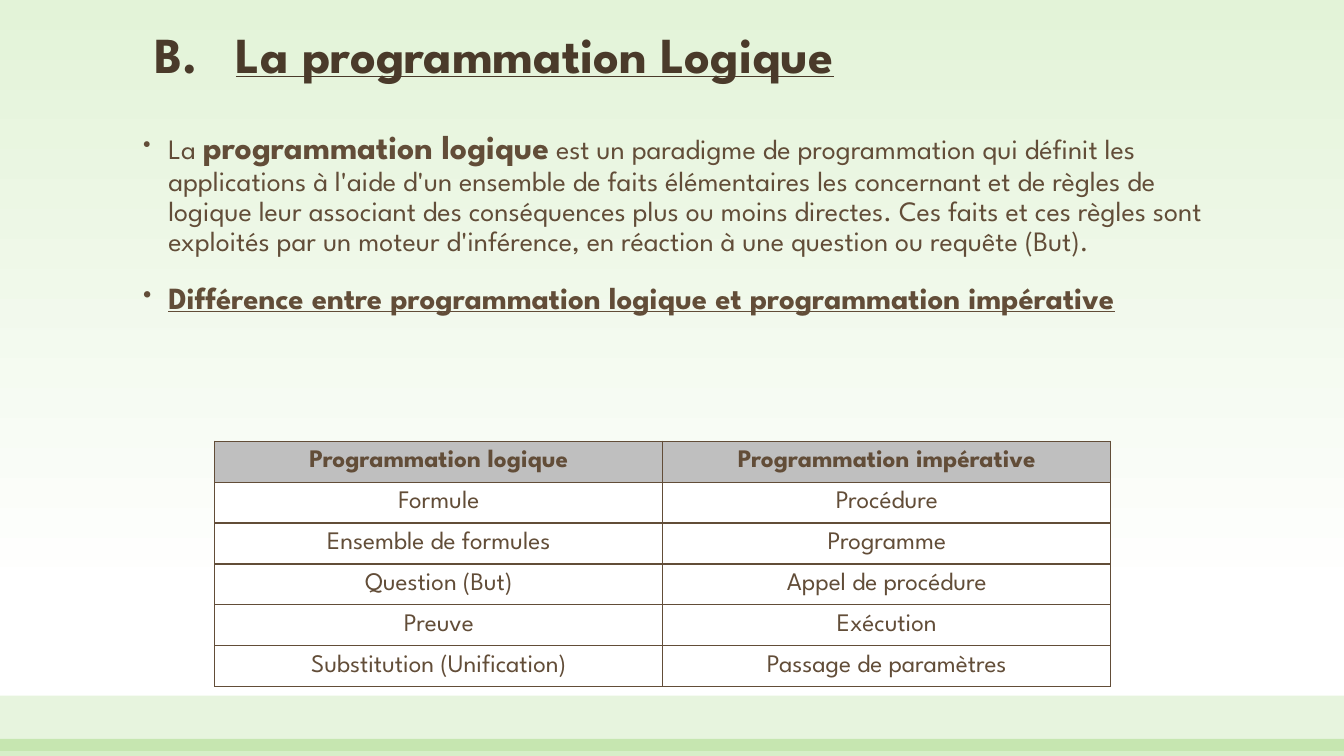
"""Build the slide on logic programming with its comparison table."""
from dataclasses import dataclass

from lxml.etree import SubElement
from pptx import Presentation
from pptx.dml.color import RGBColor
from pptx.enum.shapes import MSO_SHAPE
from pptx.enum.text import MSO_ANCHOR, MSO_AUTO_SIZE, PP_ALIGN
from pptx.oxml.ns import qn
from pptx.slide import Slide
from pptx.table import _Cell
from pptx.text.text import Font, _Paragraph
from pptx.util import Pt


@dataclass(frozen=True)
class Theme:
    font: str = "League Spartan"
    heading: str = "4A3A2A"
    text: str = "624D38"
    band: str = "72C23C"
    sky: str = "E3F3D8"
    white: str = "FFFFFF"
    header_fill: str = "BFBFBF"
    title_size: int = 36
    term_size: int = 24
    subtitle_size: int = 22
    body_size: int = 20
    table_size: int = 18


@dataclass(frozen=True)
class Box:
    left: float
    top: float
    width: float
    height: float

    def lengths(self) -> tuple[Pt, Pt, Pt, Pt]:
        return Pt(self.left), Pt(self.top), Pt(self.width), Pt(self.height)


@dataclass(frozen=True)
class Band:
    box: Box
    opacity: int


@dataclass(frozen=True)
class Equivalence:
    logic: str
    imperative: str


@dataclass(frozen=True)
class Phrase:
    text: str
    size: int
    bold: bool = False


THEME = Theme()
SLIDE_WIDTH, SLIDE_HEIGHT = 960, 540
TITLE_BOX = Box(103, 0, 749, 64)
BODY_BOX = Box(91.5, 90, 793.5, 191.5)
TABLE_BOX = Box(153.5, 315.25, 640, 175.2)
BANDS = (
    Band(Box(0, 496.8, SLIDE_WIDTH, 39.6), 17),
    Band(Box(0, 527.8, SLIDE_WIDTH, 12.2), 28),
)
DEFINITION = (
    Phrase("La ", THEME.body_size),
    Phrase("programmation logique", THEME.term_size, True),
    Phrase(
        " est un paradigme de programmation qui définit les applications "
        "à l'aide d'un ensemble de faits élémentaires les concernant et de règles "
        "de logique leur associant des conséquences plus ou moins directes. "
        "Ces faits et ces règles sont exploités par un moteur d'inférence, "
        "en réaction à une question ou requête (But).",
        THEME.body_size,
    ),
)
EQUIVALENCES = (
    Equivalence("Programmation logique", "Programmation impérative"),
    Equivalence("Formule", "Procédure"),
    Equivalence("Ensemble de formules", "Programme"),
    Equivalence("Question (But)", "Appel de procédure"),
    Equivalence("Preuve", "Exécution"),
    Equivalence("Substitution (Unification)", "Passage de paramètres"),
)


def style_font(font: Font, size: int, color: str, bold: bool = False, underline: bool = False) -> None:
    font.name = THEME.font
    font.size = Pt(size)
    font.bold = bold
    font.underline = underline
    font.color.rgb = RGBColor.from_string(color)


def hang(paragraph: _Paragraph, margin: float, indent: float, marker: str, **attributes: str) -> None:
    properties = paragraph._p.get_or_add_pPr()
    properties.set("marL", str(Pt(margin)))
    properties.set("indent", str(Pt(indent)))
    paragraph.line_spacing = 0.9
    if marker == "a:buChar":
        SubElement(properties, qn("a:buSzPct"), val="80000")
    SubElement(properties, qn(marker), **attributes)


def paint_background(slide: Slide) -> None:
    fill = slide.background.fill
    fill.gradient()
    fill.gradient_angle = 270
    for stop, color, position in zip(fill.gradient_stops, (THEME.sky, THEME.white), (0, 0.79)):
        stop.color.rgb = RGBColor.from_string(color)
        stop.position = position


def add_band(slide: Slide, band: Band) -> None:
    strip = slide.shapes.add_shape(MSO_SHAPE.RECTANGLE, *band.box.lengths())
    strip.shadow.inherit = False
    strip.line.fill.background()
    strip.fill.solid()
    strip.fill.fore_color.rgb = RGBColor.from_string(THEME.band)
    color = strip._element.spPr.find(qn("a:solidFill"))[0]
    SubElement(color, qn("a:alpha"), val=str(band.opacity * 1000))


def write_title(slide: Slide) -> None:
    title = slide.shapes.title
    title.left, title.top, title.width, title.height = TITLE_BOX.lengths()
    frame = title.text_frame
    frame.auto_size = MSO_AUTO_SIZE.NONE
    frame.vertical_anchor = MSO_ANCHOR.BOTTOM
    frame.text = "La programmation Logique"
    heading = frame.paragraphs[0]
    heading.alignment = PP_ALIGN.LEFT
    hang(heading, 58.3, -58.3, "a:buAutoNum", type="alphaUcPeriod", startAt="2")
    style_font(heading.font, THEME.title_size, THEME.heading, bold=True, underline=True)


def write_body(slide: Slide) -> None:
    frame = slide.shapes.add_textbox(*BODY_BOX.lengths()).text_frame
    frame.word_wrap = True
    definition = frame.paragraphs[0]
    hang(definition, 21.6, -18, "a:buChar", char="•")
    style_font(definition.font, THEME.body_size, THEME.text)
    for phrase in DEFINITION:
        run = definition.add_run()
        run.text = phrase.text
        run.font.size = Pt(phrase.size)
        run.font.bold = phrase.bold

    difference = frame.add_paragraph()
    difference.text = "Différence entre programmation logique et programmation impérative"
    difference.space_before = Pt(18)
    hang(difference, 21.6, -18, "a:buChar", char="•")
    style_font(difference.font, THEME.subtitle_size, THEME.text, bold=True, underline=True)


def fill_cell(cell: _Cell, text: str, header: bool) -> None:
    properties = cell._tc.get_or_add_tcPr()
    for side in ("a:lnL", "a:lnR", "a:lnT", "a:lnB"):
        border = SubElement(properties, qn(side), w=str(Pt(1)))
        SubElement(SubElement(border, qn("a:solidFill")), qn("a:srgbClr"), val=THEME.text)
    cell.fill.solid()
    cell.fill.fore_color.rgb = RGBColor.from_string(THEME.header_fill if header else THEME.white)
    cell.vertical_anchor = MSO_ANCHOR.MIDDLE
    cell.text = text
    label = cell.text_frame.paragraphs[0]
    label.alignment = PP_ALIGN.CENTER
    style_font(label.font, THEME.table_size, THEME.text, bold=header)


def add_comparison(slide: Slide) -> None:
    comparison = slide.shapes.add_table(len(EQUIVALENCES), 2, *TABLE_BOX.lengths()).table
    comparison.first_row = False
    comparison.horz_banding = False
    for row, pair in enumerate(EQUIVALENCES):
        for column, text in enumerate((pair.logic, pair.imperative)):
            fill_cell(comparison.cell(row, column), text, header=row == 0)


def main() -> None:
    presentation = Presentation()
    presentation.slide_width = Pt(SLIDE_WIDTH)
    presentation.slide_height = Pt(SLIDE_HEIGHT)
    slide = presentation.slides.add_slide(presentation.slide_layouts[5])
    paint_background(slide)
    for band in BANDS:
        add_band(slide, band)
    write_title(slide)
    write_body(slide)
    add_comparison(slide)
    presentation.save("out.pptx")


if __name__ == "__main__":
    main()
